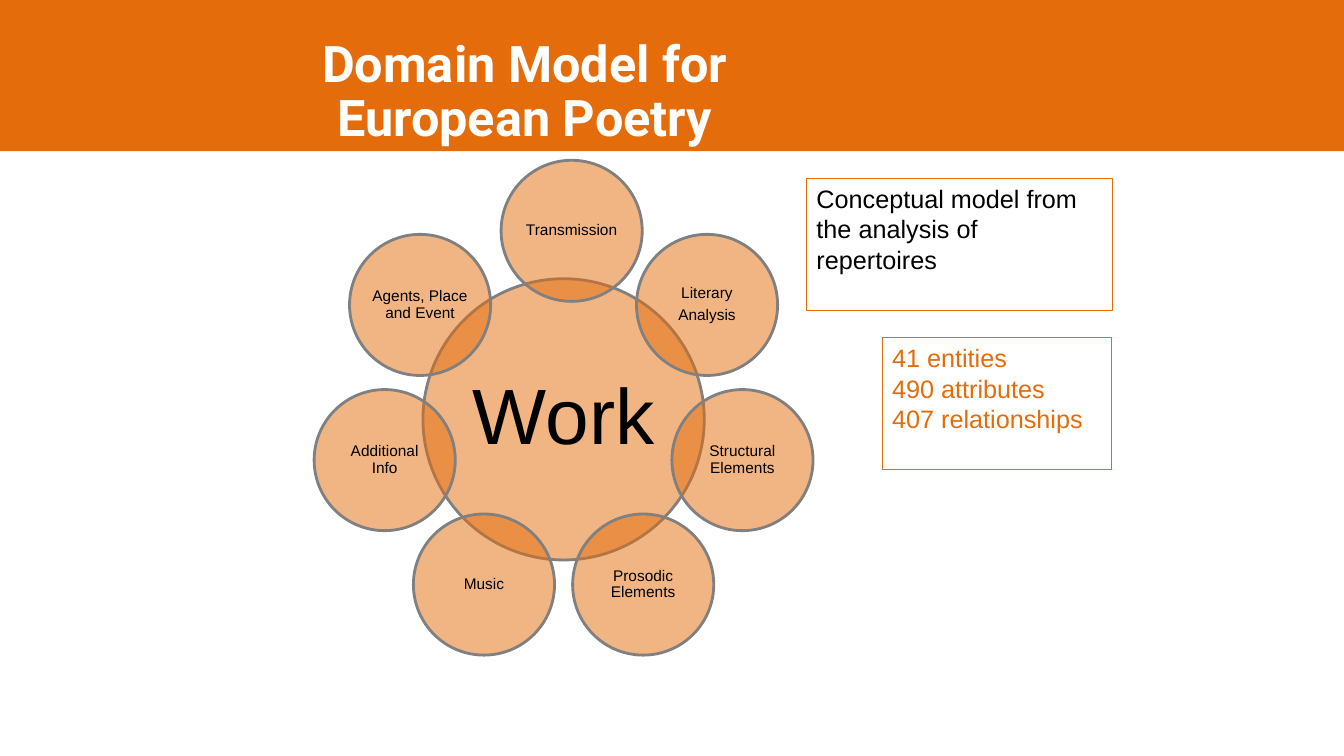
import math

import pptx
import pptx.dml.color
import pptx.enum.shapes
import pptx.enum.text
import pptx.oxml.ns
import pptx.util
from lxml import etree

Inches = pptx.util.Inches
Pt = pptx.util.Pt
RGBColor = pptx.dml.color.RGBColor
SHAPES = pptx.enum.shapes.MSO_SHAPE
ALIGN = pptx.enum.text.PP_ALIGN
ANCHOR = pptx.enum.text.MSO_ANCHOR

ORANGE = RGBColor(0xE4, 0x6C, 0x0A)
GRAY = RGBColor(0x80, 0x80, 0x80)
BLACK = RGBColor(0, 0, 0)
WHITE = RGBColor(0xFF, 0xFF, 0xFF)

TOPICS = [
    "Transmission",
    "Literary\nAnalysis",
    "Structural Elements",
    "Prosodic Elements",
    "Music",
    "Additional Info",
    "Agents, Place and Event",
]
TOPIC_NUDGES = {"Transmission": (0.08, -0.05)}


def apply_format(target, values):
    """Set every attribute named in a dict of format values."""
    for name, value in values.items():
        setattr(target, name, value)


def write_text(shape, text, frame_format, para_format, font_format, color):
    """Write one paragraph per line of text and format the whole shape."""
    frame = shape.text_frame
    frame.text = text
    apply_format(frame, {"word_wrap": True, "auto_size": pptx.enum.text.MSO_AUTO_SIZE.NONE})
    apply_format(frame, frame_format)
    for para in frame.paragraphs:
        apply_format(para, para_format)
        for span in para.runs:
            apply_format(span.font, font_format)
            span.font.color.rgb = color


def add_outlined(shapes, preset, box, fill, line, line_width):
    """Add a filled preset shape with an optional outline."""
    shape = shapes.add_shape(preset, *(Inches(length) for length in box))
    shape.shadow.inherit = False
    shape.fill.solid()
    shape.fill.fore_color.rgb = fill
    if line is None:
        shape.line.fill.background()
    else:
        shape.line.color.rgb = line
        shape.line.width = Pt(line_width)
    return shape


def add_header(page, band_box, title_box):
    """Place the title over a full-width band."""
    title = page.shapes.title
    band = add_outlined(page.shapes, SHAPES.RECTANGLE, band_box, ORANGE, None, 0)
    title._element.addprevious(band._element)
    places = zip(("left", "top", "width", "height"), map(Inches, title_box))
    apply_format(title, dict(places))
    margins = dict.fromkeys(("margin_left", "margin_top", "margin_right", "margin_bottom"), 0)
    write_text(
        title, "Domain Model for European Poetry",
        {"vertical_anchor": ANCHOR.MIDDLE, **margins},
        {"alignment": ALIGN.CENTER, "line_spacing": 0.9},
        {"name": "Roboto", "size": Pt(36), "bold": True}, WHITE,
    )


def add_circle(shapes, center, diameter, text, size, margin):
    """Add a half-transparent labelled circle around a centre point."""
    left, top = (coordinate - diameter / 2 for coordinate in center)
    circle = add_outlined(shapes, SHAPES.OVAL, (left, top, diameter, diameter), ORANGE, GRAY, 2)
    color = circle._element.spPr.find(".//" + pptx.oxml.ns.qn("a:srgbClr"))
    etree.SubElement(color, pptx.oxml.ns.qn("a:alpha"), val="50000")
    sides = ("margin_left", "margin_top", "margin_right", "margin_bottom")
    write_text(
        circle, text,
        {"vertical_anchor": ANCHOR.MIDDLE, **dict.fromkeys(sides, Inches(margin))},
        {"alignment": ALIGN.CENTER, "line_spacing": 0.9},
        {"name": "Arial", "size": Pt(size)}, BLACK,
    )
    for para in circle.text_frame.paragraphs[:-1]:
        para.space_after = Pt(size * 0.35)


def add_flower(page, center, radius, hub_diameter, petal_diameter):
    """Place the hub and a ring of topic circles, clockwise from the top."""
    shapes = page.shapes.add_group_shape().shapes
    add_circle(shapes, center, hub_diameter, "Work", 56, 0.08)
    for index, topic in enumerate(TOPICS):
        angle = 2 * math.pi * index / len(TOPICS)
        across, down = TOPIC_NUDGES.get(topic, (0, 0))
        place = (
            center[0] + radius * math.sin(angle) + across,
            center[1] - radius * math.cos(angle) + down,
        )
        add_circle(shapes, place, petal_diameter, topic, 11, 0.02)


def add_card(page, box, text, color):
    """Add an outlined white card with left-aligned text."""
    card = add_outlined(page.shapes, SHAPES.RECTANGLE, box, WHITE, ORANGE, 0.75)
    write_text(
        card, text, {"vertical_anchor": ANCHOR.TOP}, {"alignment": ALIGN.LEFT},
        {"name": "Arial", "size": Pt(18)}, color,
    )


def main():
    """Build and save the deck."""
    deck = pptx.Presentation()
    apply_format(deck, {"slide_width": Inches(13.33), "slide_height": Inches(7.5)})
    page = deck.slides.add_slide(deck.slide_layouts.get_by_name("Title Only"))
    add_header(page, (0, 0, 13.33, 1.5), (2.17, 0.3, 6.07, 1.25))
    add_flower(page, (5.59, 4.16), 1.82, 2.79, 1.4)
    add_card(page, (8, 1.77, 3.03, 1.31), "Conceptual model from the analysis of repertoires", BLACK)
    add_card(page, (8.75, 3.35, 2.27, 1.31), "41 entities\n490 attributes\n407 relationships", ORANGE)
    deck.save("out.pptx")


if __name__ == "__main__":
    main()
